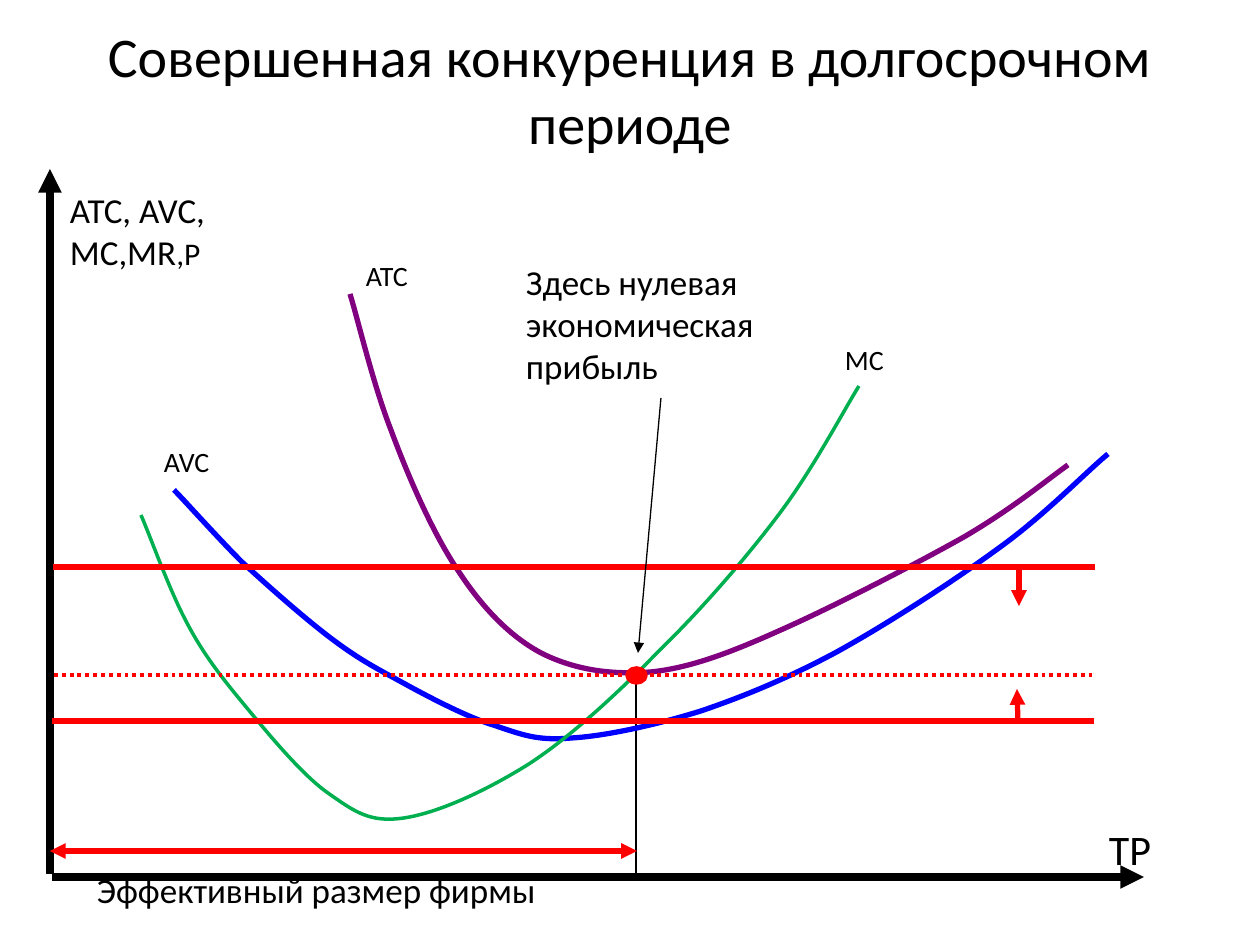
from lxml import etree
from pptx import Presentation
from pptx import util as u
from pptx.dml.color import RGBColor
from pptx.enum import dml, shapes, text
from pptx.oxml.ns import qn

PX = 914400 / 126
COLORS = {"black": "000000", "red": "FF0000", "blue": "0000FF",
          "green": "00B050", "purple": "800080"}

AVC = [(174, 490),
       (185, 501), (217, 537), (242, 562), (268, 586), (302, 616), (328, 636),
       (353, 655), (368, 664), (396, 679), (423, 694), (464, 716), (493, 725),
       (523, 735), (537, 741), (572, 738), (606, 736), (656, 725), (701, 711),
       (745, 696), (786, 679), (835, 653), (886, 625), (954, 581), (999, 548),
       (1045, 515), (1085, 473), (1108, 454)]
MC = [(141, 515),
      (149, 533), (168, 586), (184, 617), (200, 649), (218, 673), (242, 702),
      (266, 731), (301, 774), (328, 793), (355, 812), (370, 823), (404, 818),
      (438, 813), (486, 791), (529, 764), (572, 736), (619, 692), (660, 650),
      (702, 609), (747, 557), (780, 513), (813, 469), (843, 412), (859, 386)]
ATC = [(350, 294),
       (357, 316), (373, 384), (391, 430), (408, 476), (433, 534), (459, 572),
       (484, 610), (512, 638), (543, 654), (576, 670), (611, 675), (651, 672),
       (690, 668), (730, 653), (781, 630), (833, 607), (916, 564), (964, 537),
       (1012, 509), (1047, 480), (1068, 465)]


def px(*lengths):
    return [round(length * PX) for length in lengths]


def rgb(name):
    return RGBColor.from_string(COLORS[name])


def set_line(shape, color, width):
    shape.line.color.rgb = rgb(color)
    shape.line.width = u.Pt(width)


def add_line(page, start, end, color, width, ends=(), dash=None):
    line = page.shapes.add_connector(
        shapes.MSO_CONNECTOR.STRAIGHT, *px(*start, *end))
    set_line(line, color, width)
    if dash:
        line.line.dash_style = dash
    outline = line.line._get_or_add_ln()
    for tag in ends:
        etree.SubElement(outline, qn(tag)).set("type", "triangle")
    etree.SubElement(line._element.spPr, qn("a:effectLst"))


def add_curve(page, points, color, width):
    """Draw a chain of cubic Béziers: a start, then three points per piece."""
    builder = page.shapes.build_freeform(*points[0], scale=PX)
    builder.add_line_segments(points[1:], close=False)
    curve = builder.convert_to_shape()
    curve.shadow.inherit = False
    curve.fill.background()
    set_line(curve, color, width)
    steps = list(curve._element.iter(qn("a:lnTo")))
    for first in range(0, len(steps), 3):
        bezier = etree.Element(qn("a:cubicBezTo"))
        steps[first].addprevious(bezier)
        for step in steps[first:first + 3]:
            bezier.append(step[0])
            step.getparent().remove(step)


def add_dot(page, place, color):
    dot = page.shapes.add_shape(shapes.MSO_SHAPE.OVAL, *px(*place))
    dot.shadow.inherit = False
    dot.fill.solid()
    dot.fill.fore_color.rgb = rgb(color)
    set_line(dot, color, 2)


def add_text(page, place, words, size, inset=(8, 4)):
    box = page.shapes.add_textbox(*px(*place))
    frame = box.text_frame
    frame.word_wrap = True
    frame.margin_left = frame.margin_right = px(inset[0])[0]
    frame.margin_top = frame.margin_bottom = px(inset[1])[0]
    para = frame.paragraphs[0]
    para.text = words
    para.font.name = "Calibri"
    para.font.size = u.Pt(size)
    para.font.color.rgb = rgb("black")
    return frame


def main():
    deck = Presentation()
    deck.slide_width, deck.slide_height = px(1260, 945)
    page = deck.slides.add_slide(deck.slide_layouts[6])
    head, tail = "a:headEnd", "a:tailEnd"

    add_line(page, (636, 675), (636, 878), "black", 0.75)
    title = add_text(page, (63, 38, 1134, 101),
                     "Совершенная конкуренция в долгосрочном периоде", 32, (13, 6))
    title.vertical_anchor = text.MSO_ANCHOR.MIDDLE
    title.paragraphs[0].alignment = text.PP_ALIGN.CENTER

    add_line(page, (50, 874), (50, 169), "black", 4.5, [tail])
    add_line(page, (52, 877), (1144, 877), "black", 4.5, [tail])
    axis = add_text(page, (62, 184, 198, 120), "ATC, AVC, MC,MR", 20)
    span = axis.paragraphs[0].add_run()
    span.text = ",P"
    span.font.size = u.Pt(18)
    add_text(page, (1101, 820, 68, 37), "TP", 24)

    add_curve(page, AVC, "blue", 3)
    add_curve(page, MC, "green", 2)
    add_curve(page, ATC, "purple", 3)
    for name, left, top in (("MC", 837, 339), ("AVC", 156, 441), ("ATC", 358, 255)):
        add_text(page, (left, top, 82, 37), name, 16)

    add_line(page, (54, 675), (1096, 675), "red", 2.25,
             dash=dml.MSO_LINE.ROUND_DOT)
    add_dot(page, (627, 668, 19, 15), "red")
    add_line(page, (53, 567), (1095, 567), "red", 3)
    add_line(page, (1019, 568), (1019, 606), "red", 3, [tail])
    add_line(page, (52, 721), (1094, 721), "red", 3)
    add_line(page, (1018, 722), (1017, 689), "red", 3, [tail])

    add_line(page, (661, 398), (638, 653), "black", 0.75, [tail])
    add_text(page, (518, 256, 260, 120), "Здесь нулевая экономическая прибыль", 20)
    add_line(page, (50, 851), (637, 851), "red", 3, [head, tail])
    add_text(page, (89, 864, 507, 47), "Эффективный размер фирмы", 20)
    deck.save("out.pptx")


if __name__ == "__main__":
    main()
